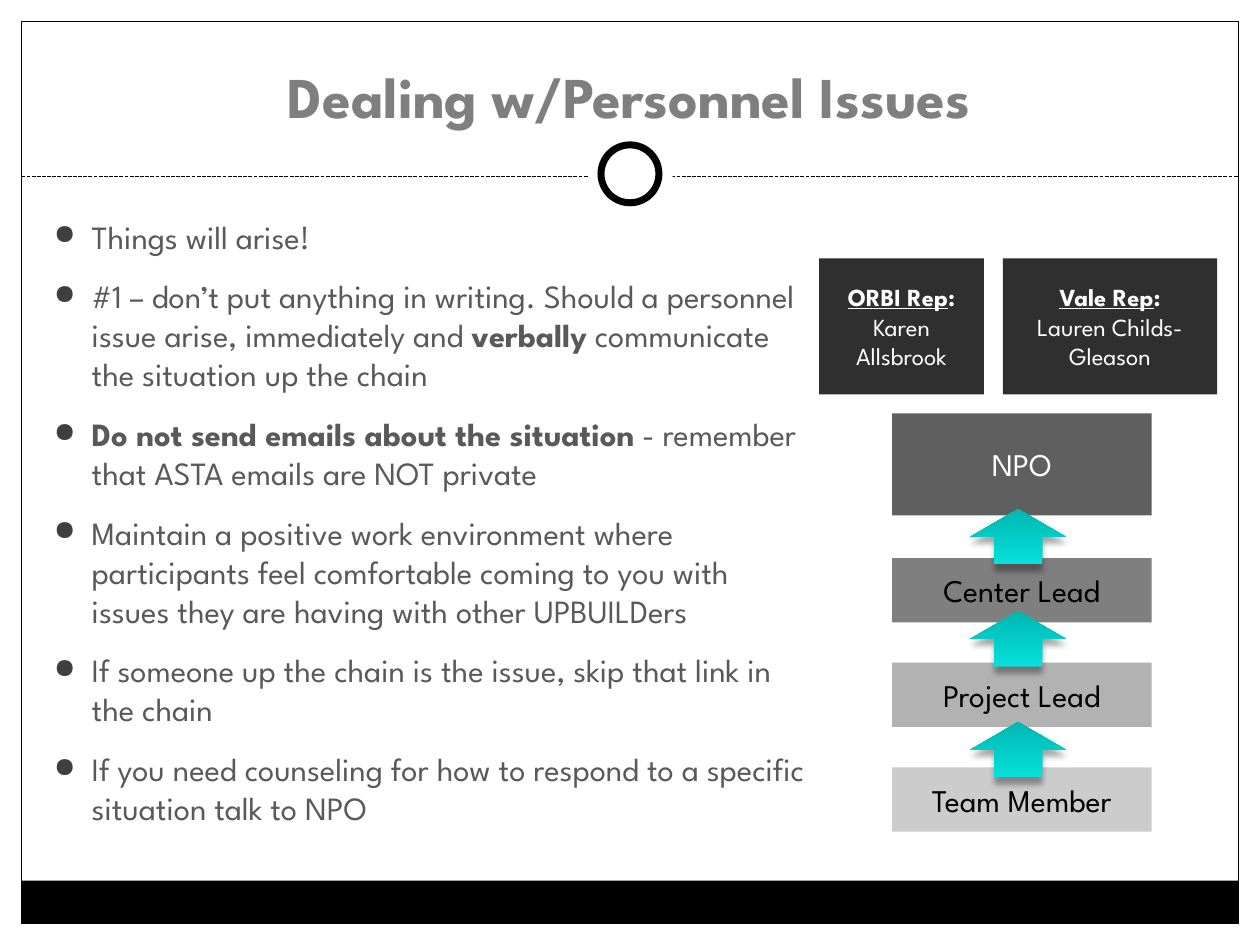
"""Build the slide on dealing with personnel issues."""
from lxml.etree import SubElement
from pptx import Presentation
from pptx.dml.color import RGBColor as RGB
from pptx.enum.dml import MSO_LINE as Dash
from pptx.enum.shapes import MSO_CONNECTOR as Link, MSO_SHAPE as Form
from pptx.enum.text import MSO_ANCHOR as Anchor, PP_ALIGN as Align
from pptx.oxml.ns import qn
from pptx.util import Inches, Pt

FONT = "League Spartan"
BLACK = RGB(0x00, 0x00, 0x00)
WHITE = RGB(0xFF, 0xFF, 0xFF)
GREY = RGB(0x7F, 0x7F, 0x7F)
TEXT = RGB(0x59, 0x59, 0x59)
DARK = RGB(0x2F, 0x2F, 0x2F)
SLATE = RGB(0x5F, 0x5F, 0x5F)
SILVER = RGB(0xB2, 0xB2, 0xB2)
PALE = RGB(0xCC, 0xCC, 0xCC)
AQUA = RGB(0x05, 0xE0, 0xDB)
TEAL = RGB(0x00, 0xB6, 0xB2)


def write(para, text, size=18, color=BLACK, bold=False, under=False, align=None):
    if align is not None:
        para.alignment = align
    run = para.add_run()
    run.text = text
    font = run.font
    font.name, font.size, font.bold, font.underline = FONT, Pt(size), bold, under
    font.color.rgb = color


def draw(form, left, top, width, height, fill=None, line=None, weight=0.75):
    shape = slide.shapes.add_shape(
        form, Inches(left), Inches(top), Inches(width), Inches(height))
    shape.shadow.inherit = False
    if fill is None:
        shape.fill.background()
    else:
        shape.fill.solid()
        shape.fill.fore_color.rgb = fill
    if line is None:
        shape.line.fill.background()
    else:
        shape.line.color.rgb = line
        shape.line.width = Pt(weight)
    frame = shape.text_frame
    frame.word_wrap = True
    frame.vertical_anchor = Anchor.MIDDLE
    frame.margin_left = frame.margin_right = Inches(0.09)
    frame.margin_top = frame.margin_bottom = Inches(0.04)
    return shape


deck = Presentation()
deck.slide_width, deck.slide_height = Inches(10), Inches(7.5)
slide = deck.slides.add_slide(deck.slide_layouts[5])

draw(Form.RECTANGLE, 0.17, 6.99, 9.66, 0.34, BLACK)
draw(Form.RECTANGLE, 0.17, 0.17, 9.66, 7.16, line=BLACK)
rule = slide.shapes.add_connector(
    Link.STRAIGHT, Inches(0.17), Inches(1.4), Inches(9.83), Inches(1.4))
rule.line.color.rgb = BLACK
rule.line.width = Pt(0.75)
rule.line.dash_style = Dash.SQUARE_DOT
SubElement(rule._element.spPr, qn("a:effectLst"))
draw(Form.OVAL, 4.67, 1.05, 0.67, 0.67, WHITE)
draw(Form.OVAL, 4.77, 1.15, 0.46, 0.46, WHITE, BLACK, 4)

title = slide.shapes.title
title.left, title.top = Inches(0.33), Inches(0.25)
title.width, title.height = Inches(9.33), Inches(0.83)
title.text_frame.vertical_anchor = Anchor.BOTTOM
write(title.text_frame.paragraphs[0], "Dealing w/Personnel Issues",
      size=33, color=GREY, bold=True, align=Align.CENTER)

POINTS = [
    [("Things will arise!", False)],
    [("#1 – don’t put anything in writing. Should a personnel issue arise, "
      "immediately and ", False), ("verbally", True),
     (" communicate the situation up the chain", False)],
    [("Do not send emails about the situation", True),
     (" - remember that ASTA emails are NOT private", False)],
    [("Maintain a positive work environment where participants feel comfortable "
      "coming to you with issues they are having with other UPBUILDers", False)],
    [("If someone up the chain is the issue, skip that link in the chain", False)],
    [("If you need counseling for how to respond to a specific situation "
      "talk to NPO", False)],
]
body = slide.shapes.add_textbox(
    Inches(0.33), Inches(1.67), Inches(6.17), Inches(5.25)).text_frame
body.word_wrap = True
for i, point in enumerate(POINTS):
    para = body.add_paragraph() if i else body.paragraphs[0]
    para.space_before = Pt(12)
    props = para._p.get_or_add_pPr()
    props.set("marL", str(Inches(0.3)))
    props.set("indent", str(Inches(-0.3)))
    tint = SubElement(props, qn("a:buClr"))
    SubElement(tint, qn("a:srgbClr"), val="3F3F3F")
    SubElement(props, qn("a:buSzPct"), val="85000")
    SubElement(props, qn("a:buChar"), char="●")
    for text, bold in point:
        write(para, text, size=18.5, color=TEXT, bold=bold)

REPS = [
    (6.5, 1.31, "ORBI Rep", "Karen Allsbrook"),
    (7.96, 1.7, "Vale Rep", "Lauren Childs-Gleason"),
]
for left, width, role, name in REPS:
    frame = draw(Form.RECTANGLE, left, 2.05, width, 1.08, DARK).text_frame
    head = frame.paragraphs[0]
    write(head, role, size=14, color=WHITE, bold=True, under=True, align=Align.CENTER)
    write(head, ":", size=14, color=WHITE, bold=True)
    write(frame.add_paragraph(), name, size=14, color=WHITE, align=Align.CENTER)

CHAIN = [
    ("NPO", 3.28, 0.81, SLATE, WHITE),
    ("Center Lead", 4.43, 0.51, GREY, BLACK),
    ("Project Lead", 5.26, 0.51, SILVER, BLACK),
    ("Team Member", 6.09, 0.51, PALE, BLACK),
]
for label, top, height, fill, color in CHAIN:
    box = draw(Form.RECTANGLE, 7.08, top, 2.06, height, fill)
    write(box.text_frame.paragraphs[0], label, color=color, align=Align.CENTER)

for top in (5.73, 4.85, 4.04):
    arrow = draw(Form.DOWN_ARROW, 7.7, top, 0.76, 0.44)
    arrow.rotation = 180
    arrow.fill.gradient()
    arrow.fill.gradient_angle = 270
    for stop, color, place in zip(arrow.fill.gradient_stops, (AQUA, TEAL), (0, 1)):
        stop.color.rgb = color
        stop.position = place
    effect = arrow._element.spPr.find(qn("a:effectLst"))
    shade = SubElement(effect, qn("a:outerShdw"), blurRad=str(Pt(3.5)),
                       dist=str(Pt(4)), dir="5400000", rotWithShape="0")
    tint = SubElement(shade, qn("a:srgbClr"), val="000000")
    SubElement(tint, qn("a:alpha"), val="34000")

deck.save("out.pptx")
